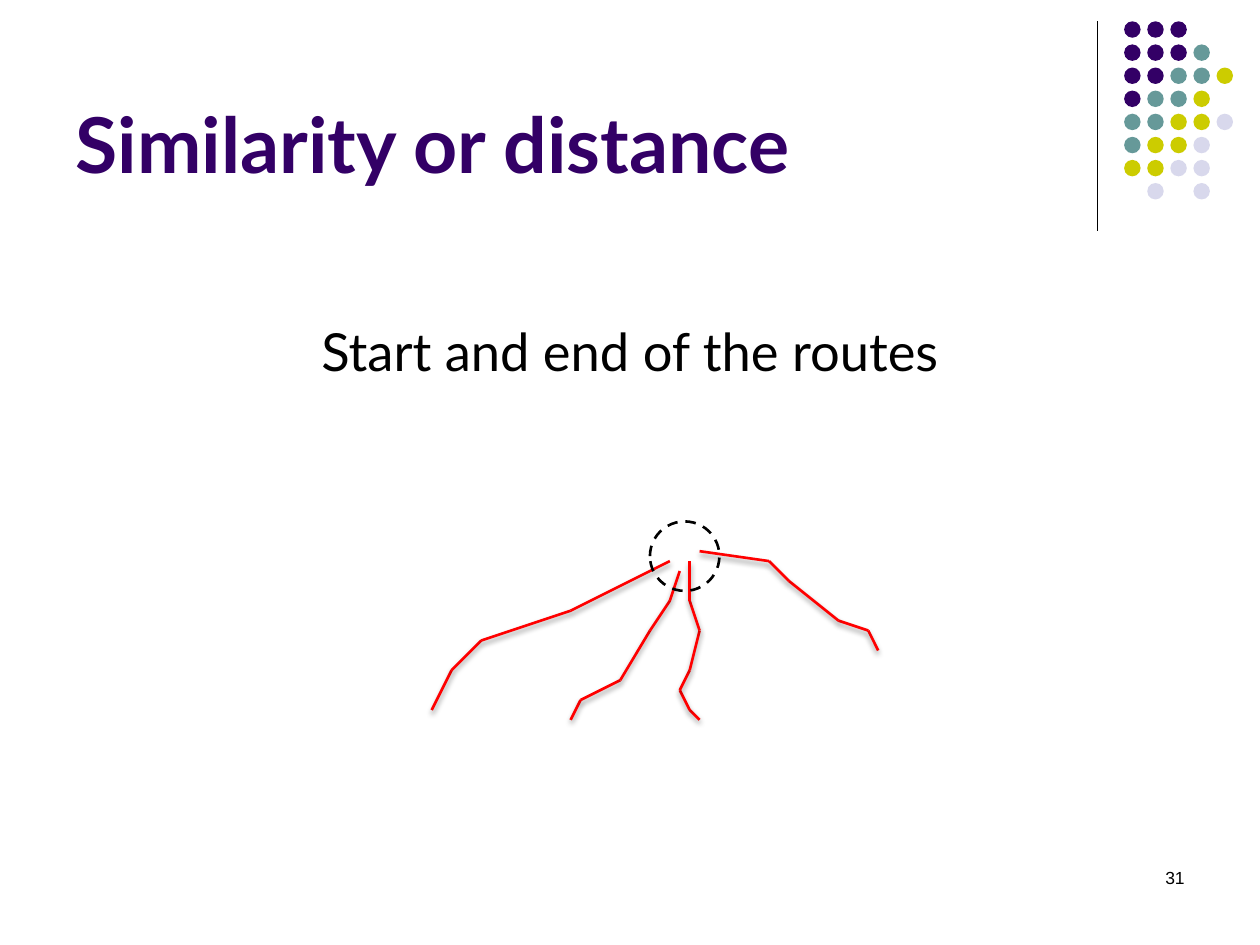
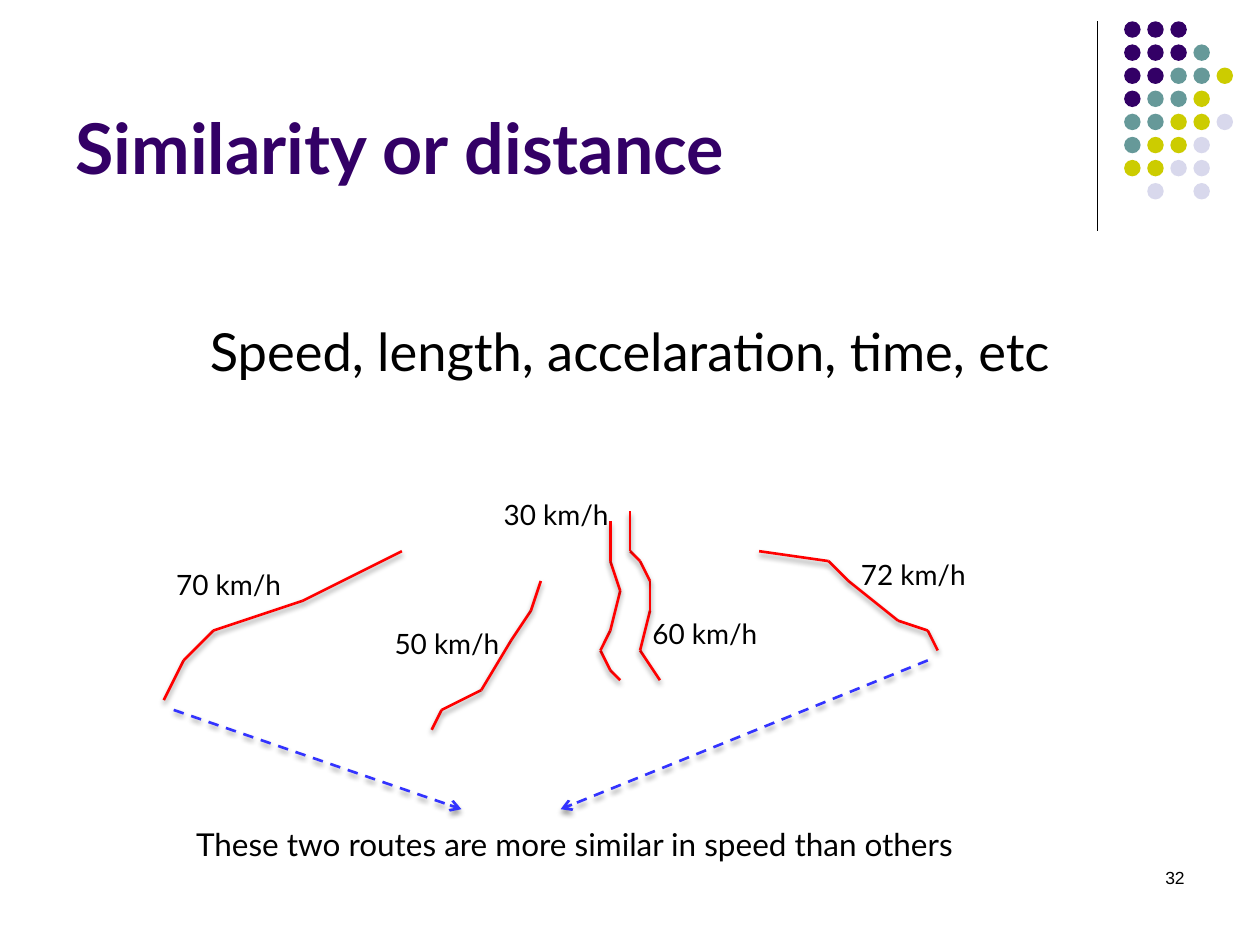
from dataclasses import dataclass

from lxml.etree import SubElement
from pptx import Presentation
from pptx.dml.color import RGBColor
from pptx.enum.dml import MSO_LINE
from pptx.enum.shapes import MSO_CONNECTOR, MSO_SHAPE
from pptx.enum.text import MSO_ANCHOR, MSO_AUTO_SIZE, PP_ALIGN
from pptx.oxml.ns import qn
from pptx.util import Pt


@dataclass(frozen=True)
class Theme:
    ink: str = "000000"
    purple: str = "330066"
    teal: str = "669999"
    olive: str = "CCCC00"
    lilac: str = "D8D8EC"
    route: str = "FF0000"
    pointer: str = "3333FF"
    font: str = "Lato"
    number_font: str = "Arial"
    body: int = 30
    caption: int = 18
    label: int = 16
    number: int = 10
    thin: float = 0.75
    line: float = 1.5


T = Theme()

TITLE_BOX = (36, 9.4, 594, 102)
BODY_BOX = (36, 135.4, 648, 347)
NUMBER_BOX = (516, 492, 168, 36)
CORNER_BOX = (627.1, 12.2, 82, 119.6)
MAP_ORIGIN = (93.6, 292.3)
STEP = 5.67  # map grid, 2 mm

DOT_COLORS = {"p": T.purple, "t": T.teal, "o": T.olive, "l": T.lilac}
DOT_ROWS = ["ppp", "pppt", "pptto", "ptto", "ttool", "tool", "ooll", " l l"]

# Route outlines in grid steps from their lower end
WEST = [(0, 0), (2, -4), (5, -7), (14, -10), (24, -15)]
SOUTHWEST = [(0, 0), (1, -2), (5, -4), (8, -9), (10, -12), (11, -15)]
SOUTH = [(0, 0), (-1, -1), (-2, -3), (-1, -5), (0, -9), (-1, -12), (-1, -16)]
SOUTHEAST = [(0, 0), (-2, -3), (-1, -7), (-1, -10), (-2, -12), (-3, -13), (-3, -17)]
EAST = [(0, 0), (-1, -2), (-4, -3), (-9, -7), (-11, -9), (-18, -10)]


def rgb(color):
    return RGBColor.from_string(color)


def pts(*values):
    return [Pt(v) for v in values]


def on_map(col, row):
    return MAP_ORIGIN[0] + col * STEP, MAP_ORIGIN[1] + row * STEP


def write(tf, text, size, color=T.ink, font=T.font, bold=False, align=PP_ALIGN.LEFT):
    tf.word_wrap = True
    p = tf.paragraphs[0]
    p.alignment = align
    r = p.add_run()
    r.text = text
    r.font.name, r.font.size, r.font.bold = font, Pt(size), bold
    r.font.color.rgb = rgb(color)


def add_text(s, box, text, size, **style):
    tf = s.shapes.add_textbox(*pts(*box)).text_frame
    write(tf, text, size, **style)
    return tf


def add_line(s, start, end, color, width=T.line, shadow=False):
    line = s.shapes.add_connector(MSO_CONNECTOR.STRAIGHT, *pts(*start, *end))
    line.line.color.rgb = rgb(color)
    line.line.width = Pt(width)
    effects = SubElement(line._element.spPr, qn("a:effectLst"))
    if shadow:
        outer = SubElement(effects, qn("a:outerShdw"), blurRad=str(Pt(3)),
                           dist=str(Pt(2)), dir="5400000", rotWithShape="0")
        black = SubElement(outer, qn("a:srgbClr"), val=T.ink)
        SubElement(black, qn("a:alpha"), val="40000")
    return line


def add_route(s, outline, col, row):
    corners = [on_map(col + dx, row + dy) for dx, dy in outline]
    for start, end in zip(corners, corners[1:]):
        add_line(s, start, end, T.route, shadow=True)


def add_pointer(s, start, end):
    line = add_line(s, on_map(*start), on_map(*end), T.pointer, shadow=True).line
    line.dash_style = MSO_LINE.DASH
    SubElement(line._get_or_add_ln(), qn("a:tailEnd"), type="arrow")


def add_corner(s, box):
    """Vertical rule with the dot pattern to its right."""
    x, y, w, h = box
    add_line(s, (x, y), (x, y + h), T.ink, T.thin)
    size, pitch = 9.4, 13.2
    left = x + w - 4 * pitch - size - 4.5
    dots = s.shapes.add_group_shape()
    for i, row in enumerate(DOT_ROWS):
        for j, key in enumerate(row):
            if key in DOT_COLORS:
                dot = dots.shapes.add_shape(
                    MSO_SHAPE.OVAL, *pts(left + j * pitch, y + i * pitch, size, size))
                dot.shadow.inherit = False
                dot.fill.solid()
                dot.fill.fore_color.rgb = rgb(DOT_COLORS[key])
                dot.line.fill.background()


def add_base(prs, title_size, heading, number):
    """Slide with the shared title, heading, corner pattern and page number."""
    s = prs.slides.add_slide(prs.slide_layouts[5])
    add_corner(s, CORNER_BOX)
    title = s.shapes.title
    title.left, title.top, title.width, title.height = pts(*TITLE_BOX)
    tf = title.text_frame
    tf.auto_size = MSO_AUTO_SIZE.NONE
    tf.vertical_anchor = MSO_ANCHOR.BOTTOM
    write(tf, "Similarity or distance", title_size, T.purple, bold=True)
    body = add_text(s, BODY_BOX, heading, T.body, align=PP_ALIGN.CENTER)
    body.margin_top = Pt(47)
    add_text(s, NUMBER_BOX, number, T.number, font=T.number_font,
             align=PP_ALIGN.RIGHT)
    return s


def add_endpoints_slide(prs):
    s = add_base(prs, 44, "Start and end of the routes", "31")
    add_route(s, WEST, 27, 20)
    add_route(s, SOUTHWEST, 41, 21)
    add_route(s, SOUTH, 54, 21)
    add_route(s, EAST, 72, 14)
    meeting = s.shapes.add_shape(
        MSO_SHAPE.OVAL, *pts(*on_map(49, 1), 7 * STEP, 7 * STEP))
    meeting.shadow.inherit = False
    meeting.fill.background()
    meeting.line.color.rgb = rgb(T.ink)
    meeting.line.width = Pt(T.line)
    meeting.line.dash_style = MSO_LINE.DASH


def add_speed_slide(prs):
    s = add_base(prs, 40, "Speed, length, accelaration, time, etc", "32")
    routes = [  # outline, lower end, speed, label corner
        (WEST, (0, 19), 70, (0, 5)),
        (EAST, (78, 14), 72, (69, 4)),
        (SOUTHWEST, (27, 22), 50, (22, 11)),
        (SOUTH, (46, 17), 30, (33, -2)),
        (SOUTHEAST, (50, 17), 60, (48, 10)),
    ]
    for outline, end, speed, corner in routes:
        add_route(s, outline, *end)
        add_text(s, (*on_map(*corner), 85, 26.6), f"{speed} km/h", T.label)
    add_pointer(s, (1, 20), (30, 30))
    add_pointer(s, (77, 15), (40, 30))
    add_text(s, (*on_map(2, 31), 459, 29),
             "These two routes are more similar in speed than others", T.caption)


def main():
    prs = Presentation()
    prs.slide_width, prs.slide_height = pts(720, 540)
    add_endpoints_slide(prs)
    add_speed_slide(prs)
    prs.save("out.pptx")


if __name__ == "__main__":
    main()
